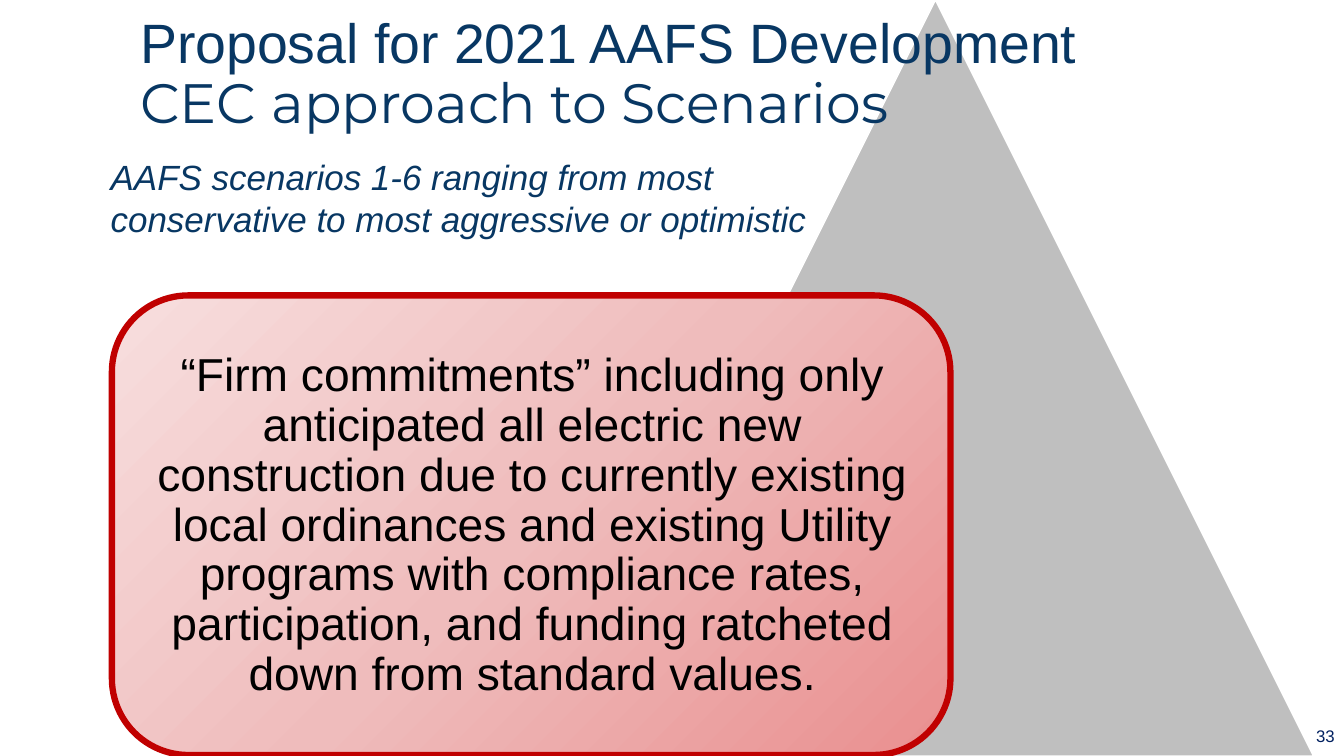
from dataclasses import dataclass

from lxml.etree import SubElement
from pptx import Presentation
from pptx.dml.color import RGBColor
from pptx.enum.shapes import MSO_SHAPE
from pptx.enum.text import MSO_ANCHOR, MSO_AUTO_SIZE, PP_ALIGN
from pptx.oxml.ns import qn
from pptx.util import Pt


@dataclass(frozen=True)
class Theme:
    """Colours, type sizes and fonts of the slide."""
    navy: str = "083763"
    number_blue: str = "002060"
    black: str = "000000"
    white: str = "FFFFFF"
    grey: str = "BFBFBF"
    red: str = "C00000"
    card_stops: tuple = ((0, "E98F8F"), (50, "EFBCBC"), (100, "F7DEDE"))
    title_size: float = 39.6
    card_size: float = 33
    subtitle_size: float = 25
    number_size: float = 12
    body_font: str = "Arial"
    accent_font: str = "Montserrat"


class SlideBuilder:
    """Adds styled elements to the current slide."""

    def __init__(self, slide, theme):
        self.slide = slide
        self.theme = theme

    def format_run(self, run, color, **values):
        """Apply font values and a colour to a run."""
        for name, value in ({"name": self.theme.body_font} | values).items():
            setattr(run.font, name, value)
        run.font.color.rgb = RGBColor.from_string(color)

    def format_frame(self, frame, anchor, inset=None):
        """Set wrapping, anchor and margins of a text frame."""
        values = {"word_wrap": True, "auto_size": MSO_AUTO_SIZE.NONE, "vertical_anchor": anchor}
        if inset is not None:
            sides = ("left", "top", "right", "bottom")
            values |= {f"margin_{side}": Pt(inset) for side in sides}
        for name, value in values.items():
            setattr(frame, name, value)

    def title(self, box, lines, size):
        """Place the title with one font for each line."""
        shape = self.slide.shapes.title
        for name, value in zip(("left", "top", "width", "height"), box):
            setattr(shape, name, Pt(value))
        self.format_frame(shape.text_frame, MSO_ANCHOR.MIDDLE)
        paragraph = shape.text_frame.paragraphs[0]
        paragraph.alignment = PP_ALIGN.LEFT
        paragraph.line_spacing = 0.9
        for index, (text, font) in enumerate(lines):
            if index:
                paragraph.add_line_break()
            run = paragraph.add_run()
            run.text = text
            self.format_run(run, self.theme.navy, name=font, size=Pt(size))

    def text(self, box, text, size, color, align=PP_ALIGN.LEFT, anchor=MSO_ANCHOR.TOP,
             inset=None, spacing=None, indent=0, italic=False):
        """Add a text box with one paragraph."""
        frame = self.slide.shapes.add_textbox(*map(Pt, box)).text_frame
        self.format_frame(frame, anchor, inset)
        paragraph = frame.paragraphs[0]
        if indent:
            paragraph._p.get_or_add_pPr().set("marL", str(Pt(indent)))
        paragraph.alignment = align
        paragraph.line_spacing = spacing
        run = paragraph.add_run()
        run.text = text
        self.format_run(run, color, size=Pt(size), italic=italic)

    def shape(self, kind, box, line, line_width, fill=None):
        """Add an outlined preset shape."""
        shape = self.slide.shapes.add_shape(kind, *map(Pt, box))
        shape.shadow.inherit = False
        shape.line.color.rgb = RGBColor.from_string(line)
        shape.line.width = Pt(line_width)
        if fill:
            shape.fill.solid()
            shape.fill.fore_color.rgb = RGBColor.from_string(fill)
        return shape

    def corner_gradient(self, shape, stops):
        """Fill a shape with a gradient spreading from its lower right corner."""
        shape.fill.gradient()
        gradient = shape._element.spPr.find(qn("a:gradFill"))
        for child in list(gradient):
            gradient.remove(child)
        stop_list = SubElement(gradient, qn("a:gsLst"))
        for position, color in stops:
            stop = SubElement(stop_list, qn("a:gs"), pos=str(position * 1000))
            SubElement(stop, qn("a:srgbClr"), val=color)
        circle = SubElement(gradient, qn("a:path"), {"path": "circle"})
        SubElement(circle, qn("a:fillToRect"), l="100000", t="100000")


def main():
    """Build the scenario slide and save it."""
    theme = Theme()
    presentation = Presentation()
    presentation.slide_width, presentation.slide_height = Pt(960), Pt(540)
    slide = presentation.slides.add_slide(presentation.slide_layouts[5])
    builder = SlideBuilder(slide, theme)

    builder.text((821.5, 511.2, 139, 28.8), "33", theme.number_size, theme.number_blue,
                 align=PP_ALIGN.RIGHT, anchor=MSO_ANCHOR.MIDDLE)
    builder.shape(MSO_SHAPE.ISOSCELES_TRIANGLE, (398.2, 0, 540, 540), theme.white, 1, theme.grey)
    card = builder.shape(MSO_SHAPE.ROUNDED_RECTANGLE, (79.9, 211, 599, 328.3), theme.red, 4.5)
    builder.corner_gradient(card, theme.card_stops)
    builder.text(
        (96.5, 227.5, 567.4, 296.6),
        "“Firm commitments” including only anticipated all electric new construction due to "
        "currently existing local ordinances and existing Utility programs with compliance "
        "rates, participation, and funding ratcheted down from standard values.",
        theme.card_size, theme.black, align=PP_ALIGN.CENTER, anchor=MSO_ANCHOR.MIDDLE,
        inset=10, spacing=0.9)
    slide.shapes._spTree.append(slide.shapes.title._element)
    builder.title((92.9, 13, 833.8, 82),
                  (("Proposal for 2021 AAFS Development", theme.body_font),
                   ("CEC approach to Scenarios", theme.accent_font)), theme.title_size)
    builder.text((0, 107.3, 597.6, 108),
                 "AAFS scenarios 1-6 ranging from most conservative to most aggressive or optimistic",
                 theme.subtitle_size, theme.navy, indent=72, italic=True)
    presentation.save("out.pptx")


if __name__ == "__main__":
    main()
